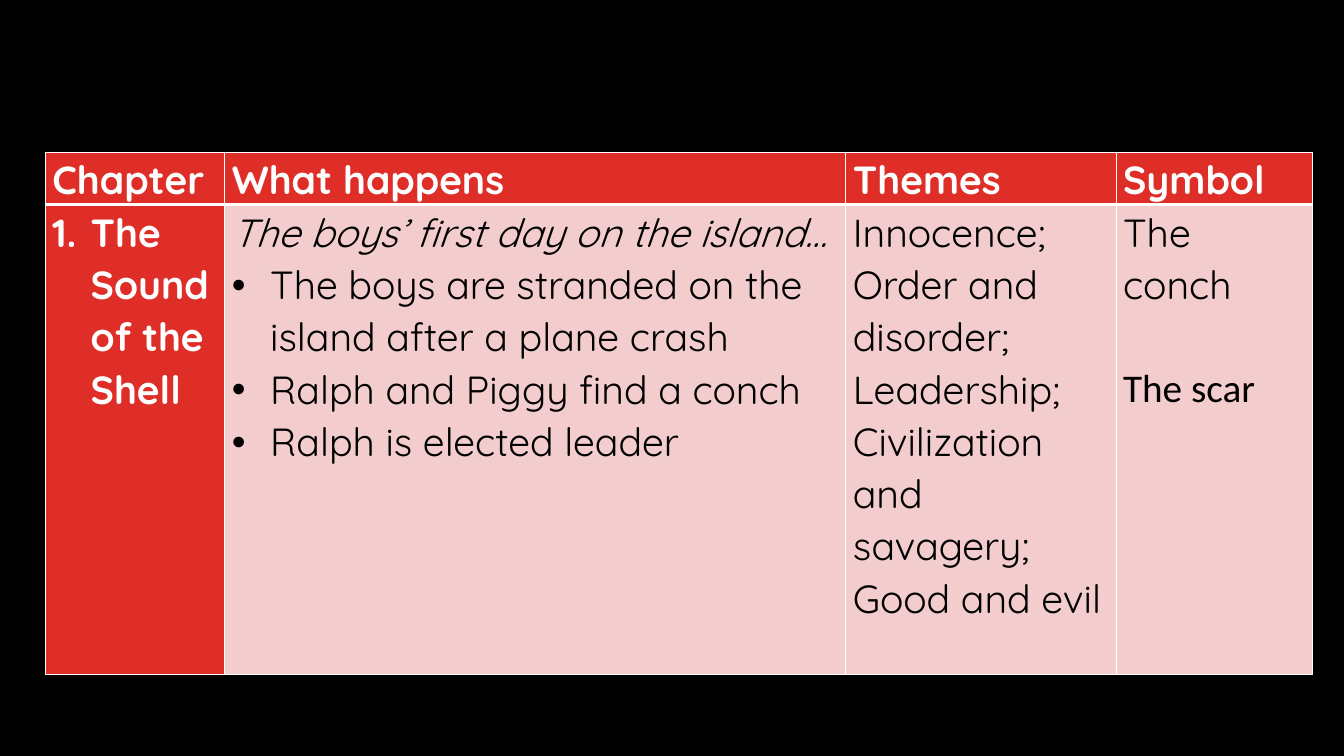
import pptx
import pptx.util
import pptx.dml.color
import pptx.oxml
import pptx.oxml.ns
from lxml import etree

Inches = pptx.util.Inches
Pt = pptx.util.Pt

THEME = {
    "back": "000000", "red": "DF2E28", "pink": "F3CDCD",
    "light": "FFFFFF", "dark": "000000",
    "font": "Quicksand", "plain": "Calibri", "size": 28,
    "thin": 1, "thick": 3, "line": 1.07, "gap": 37.5,
}
HEADS = ["Chapter", "What happens", "Themes", "Symbol"]
BODY = [
    [("The Sound of the Shell", "number")],
    [("The boys’ first day on the island…", "italic"),
     ("The boys are stranded on the island after a plane crash", "bullet"),
     ("Ralph and Piggy find a conch", "bullet"),
     ("Ralph is elected leader", "bullet")],
    [("Innocence;", ""), ("Order and disorder;", ""), ("Leadership;", ""),
     ("Civilization and savagery;", ""), ("Good and evil", "")],
    [("The conch", ""), ("The scar", "apart")],
]
ROWS = [[[(head, "")] for head in HEADS], BODY]
LEFT, TOP = 0.45, 1.51
WIDTHS = [1.78, 6.16, 2.68, 1.95]
HEIGHTS = [0.52, 4.66]
INDENT = 0.38


def color(name):
    return pptx.dml.color.RGBColor.from_string(THEME[name])


def add_tag(parent, tag, **attrs):
    item = etree.SubElement(parent, pptx.oxml.ns.qn(tag))
    for key, value in attrs.items():
        item.set(key, str(value))
    return item


def add_mark(para, kind):
    props = para._p.get_or_add_pPr()
    props.set("marL", str(Inches(INDENT)))
    props.set("indent", str(-Inches(INDENT)))
    if kind == "number":
        add_tag(props, "a:buFont", typeface="+mj-lt")
        add_tag(props, "a:buAutoNum", type="arabicPeriod")
    else:
        add_tag(props, "a:buFont", typeface="Arial")
        add_tag(props, "a:buChar", char="•")


def add_edges(cell, row):
    props = cell._tc.get_or_add_tcPr()
    thick = "a:lnB" if row == 0 else "a:lnT"
    for side in ("a:lnL", "a:lnR", "a:lnT", "a:lnB"):
        width = THEME["thick" if side == thick else "thin"]
        edge = add_tag(props, side, w=Pt(width))
        fill = add_tag(edge, "a:solidFill")
        add_tag(fill, "a:srgbClr", val=THEME["light"])


def fill_cell(cell, lines, row, col):
    strong = row == 0 or col == 0
    cell.margin_left = cell.margin_right = Inches(0.07)
    cell.margin_top = cell.margin_bottom = 0
    add_edges(cell, row)
    cell.fill.solid()
    cell.fill.fore_color.rgb = color("red" if strong else "pink")
    frame = cell.text_frame
    frame.text = "\n".join(text for text, kind in lines)
    for para, (text, kind) in zip(frame.paragraphs, lines):
        para.line_spacing = THEME["line"]
        if kind == "apart":
            para.space_before = Pt(THEME["gap"])
        if kind in ("number", "bullet"):
            add_mark(para, kind)
        font = para.runs[0].font
        font.name = THEME["plain" if kind == "apart" else "font"]
        font.size = Pt(THEME["size"])
        font.bold = strong
        font.italic = kind == "italic"
        font.color.rgb = color("light" if strong else "dark")


def main():
    deck = pptx.Presentation()
    deck.slide_width, deck.slide_height = Inches(13.33), Inches(7.5)
    slide = deck.slides.add_slide(deck.slide_layouts[6])
    slide.background.fill.solid()
    slide.background.fill.fore_color.rgb = color("back")
    table = slide.shapes.add_table(
        len(ROWS), len(HEADS), Inches(LEFT), Inches(TOP),
        Inches(sum(WIDTHS)), Inches(sum(HEIGHTS))).table
    for col, width in enumerate(WIDTHS):
        table.columns[col].width = Inches(width)
    for row, height in enumerate(HEIGHTS):
        table.rows[row].height = Inches(height)
        for col, lines in enumerate(ROWS[row]):
            fill_cell(table.cell(row, col), lines, row, col)
    deck.save("out.pptx")


if __name__ == "__main__":
    main()
